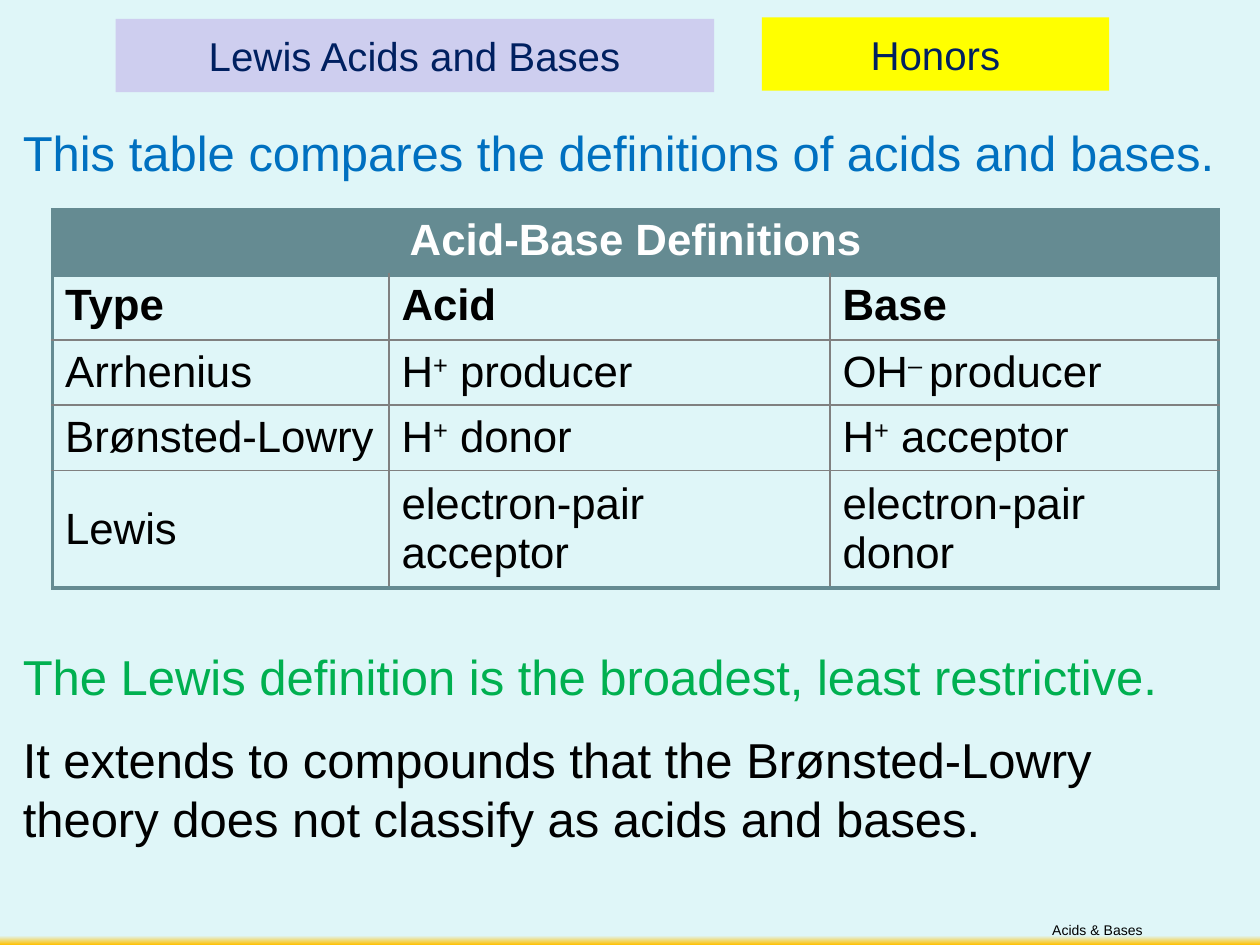
from dataclasses import dataclass

from lxml import etree
from pptx import Presentation
from pptx import util as u
from pptx.dml.color import RGBColor
from pptx.enum import shapes, text
from pptx.oxml.ns import qn


@dataclass(frozen=True)
class Theme:
    font: str = "Arial"
    background: str = "DFF6F8"
    gold: str = "FFC000"
    lavender: str = "CECEEF"
    yellow: str = "FFFF00"
    navy: str = "002060"
    blue: str = "0070C0"
    green: str = "00B050"
    black: str = "000000"
    white: str = "FFFFFF"
    teal: str = "658B92"
    gray: str = "808080"
    body_size: float = 28
    table_size: float = 25
    title_size: float = 23
    footer_size: float = 8
    frame_width: float = 2.25
    grid_width: float = 1


class SlideBuilder:
    def __init__(self, slide, theme):
        self.slide = slide
        self.theme = theme

    def background(self):
        fill = self.slide.background.fill
        fill.gradient()
        fill.gradient_angle = 270
        stops = ((0.99, self.theme.background), (1, self.theme.gold))
        for stop, (position, color) in zip(fill.gradient_stops, stops):
            stop.position = position
            stop.color.rgb = RGBColor.from_string(color)

    def format_runs(self, paragraph, size, color, bold=False):
        for run in paragraph.runs:
            run.font.name = self.theme.font
            run.font.size = u.Pt(size)
            run.font.bold = bold
            run.font.color.rgb = RGBColor.from_string(color)

    def label(self, box, words, fill):
        shape = self.slide.shapes.add_shape(
            shapes.MSO_SHAPE.RECTANGLE, *map(u.Cm, box))
        shape.shadow.inherit = False
        shape.fill.solid()
        shape.fill.fore_color.rgb = RGBColor.from_string(fill)
        shape.line.fill.background()
        shape.text_frame.text = words
        shape.text_frame.vertical_anchor = text.MSO_ANCHOR.MIDDLE
        paragraph = shape.text_frame.paragraphs[0]
        paragraph.alignment = text.PP_ALIGN.CENTER
        self.format_runs(paragraph, self.theme.title_size, self.theme.navy)

    def text_box(self, box, lines, size, align=text.PP_ALIGN.LEFT,
                 anchor=text.MSO_ANCHOR.TOP):
        """Each line is a (words, color) pair and becomes one paragraph."""
        frame = self.slide.shapes.add_textbox(*map(u.Cm, box)).text_frame
        frame.word_wrap = True
        frame.vertical_anchor = anchor
        frame.text = "\n".join(words for words, _ in lines)
        for index, (paragraph, (_, color)) in enumerate(
                zip(frame.paragraphs, lines)):
            paragraph.alignment = align
            if index:
                paragraph.space_before = u.Pt(size / 2)
            self.format_runs(paragraph, size, color)

    def borders(self, cell, heavy_sides):
        properties = cell._tc.get_or_add_tcPr()
        for side in "LRTB":
            heavy = side in heavy_sides
            width = self.theme.frame_width if heavy else self.theme.grid_width
            color = self.theme.teal if heavy else self.theme.gray
            line = etree.SubElement(
                properties, qn(f"a:ln{side}"), w=str(u.Pt(width)))
            fill = etree.SubElement(line, qn("a:solidFill"))
            etree.SubElement(fill, qn("a:srgbClr"), val=color)

    def cell_text(self, cell, words, color, bold):
        """Words between carets are superscript."""
        paragraph = cell.text_frame.paragraphs[0]
        for index, part in enumerate(words.split("^")):
            run = paragraph.add_run()
            run.text = part
            if index % 2:
                run._r.get_or_add_rPr().set("baseline", "30000")
        self.format_runs(paragraph, self.theme.table_size, color, bold)

    def table(self, box, heading, rows, widths, heights):
        theme = self.theme
        table = self.slide.shapes.add_table(
            len(heights), len(widths), *map(u.Cm, box)).table
        for column, width in zip(table.columns, widths):
            column.width = u.Cm(width)
        for row, height in zip(table.rows, heights):
            row.height = u.Cm(height)

        # Frame and grid lines
        last_row, last_column = len(heights) - 1, len(widths) - 1
        for r in range(len(heights)):
            for c in range(len(widths)):
                cell = table.cell(r, c)
                heavy = "LRTB" if r == 0 else "".join(
                    side for side, at_edge in (
                        ("L", c == 0), ("R", c == last_column),
                        ("T", r == 1), ("B", r == last_row)) if at_edge)
                self.borders(cell, heavy)
                cell.fill.background()

        # Heading across all columns
        title = table.cell(0, 0)
        title.merge(table.cell(0, last_column))
        title.fill.solid()
        title.fill.fore_color.rgb = RGBColor.from_string(theme.teal)
        self.cell_text(title, heading, theme.white, True)
        title.text_frame.paragraphs[0].alignment = text.PP_ALIGN.CENTER

        # Column names, then definitions
        for r, row in enumerate(rows, start=1):
            for c, words in enumerate(row):
                cell = table.cell(r, c)
                self.cell_text(cell, words, theme.black, r == 1)
                if r > 1:
                    cell.vertical_anchor = text.MSO_ANCHOR.MIDDLE


def main():
    presentation = Presentation()
    presentation.slide_width = u.Cm(25.4)
    presentation.slide_height = u.Cm(19.05)
    theme = Theme()
    slide = presentation.slides.add_slide(presentation.slide_layouts[6])
    builder = SlideBuilder(slide, theme)
    builder.background()

    # Title labels
    builder.label((2.33, 0.38, 12.07, 1.48), "Lewis Acids and Bases",
                  theme.lavender)
    builder.label((15.36, 0.35, 7, 1.48), "Honors", theme.yellow)

    # Introduction
    builder.text_box(
        (0.21, 2.34, 24.77, 1.45),
        [("This table compares the definitions of acids and bases.",
          theme.blue)],
        theme.body_size)

    # Definitions
    builder.table(
        (1.06, 4.23, 23.5, 7.62), "Acid-Base Definitions",
        [("Type", "Acid", "Base"),
         ("Arrhenius", "H^+^ producer", "OH^– ^producer"),
         ("Brønsted-Lowry", "H^+^ donor", "H^+^ acceptor"),
         ("Lewis", "electron-pair acceptor", "electron-pair donor")],
        widths=(6.78, 8.89, 7.83), heights=[1.31] * 4 + [2.36])

    # Conclusion
    builder.text_box(
        (0.21, 12.9, 24.77, 4.45),
        [("The Lewis definition is the broadest, least restrictive.",
          theme.green),
         ("It extends to compounds that the Brønsted-Lowry theory does not "
          "classify as acids and bases.", theme.black)],
        theme.body_size)

    # Footer
    builder.text_box((11.43, 18.21, 11.86, 0.84),
                     [("Acids & Bases", theme.black)], theme.footer_size,
                     text.PP_ALIGN.RIGHT, text.MSO_ANCHOR.BOTTOM)

    presentation.save("out.pptx")


if __name__ == "__main__":
    main()
